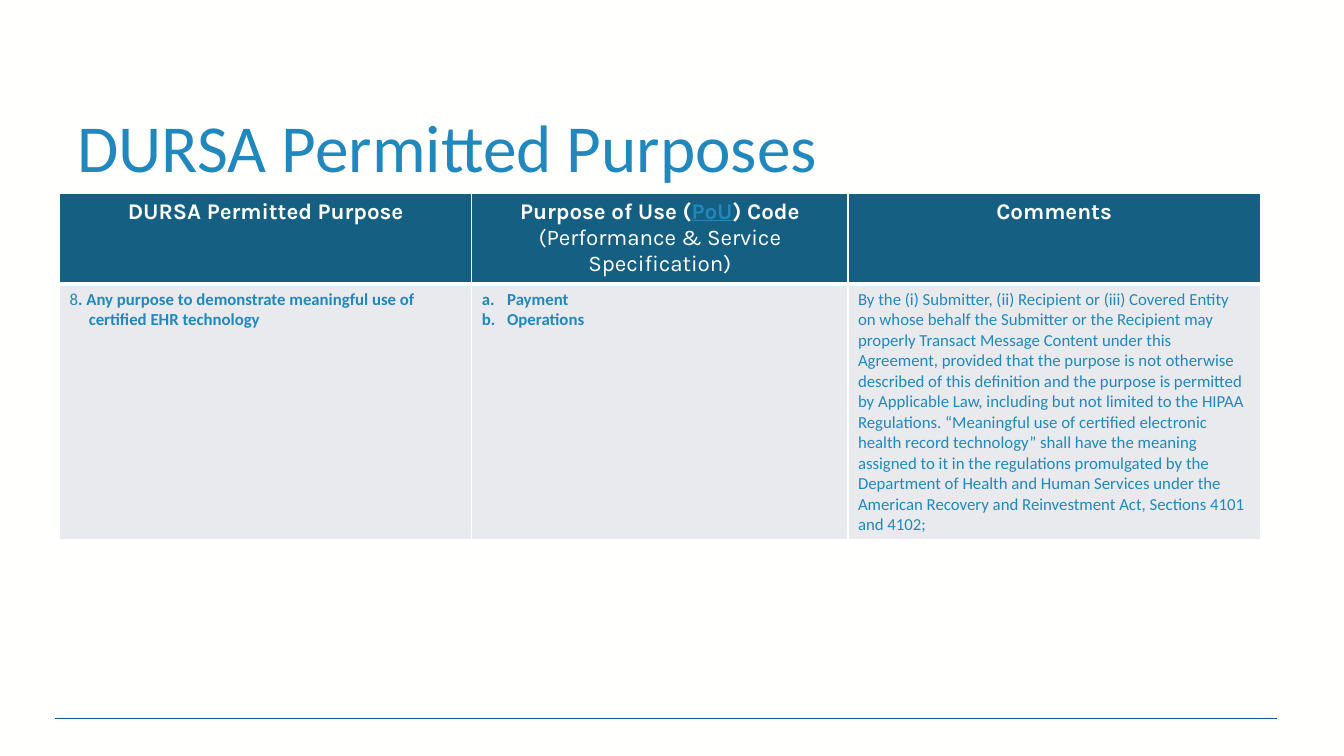
from dataclasses import dataclass

from lxml.etree import SubElement
from pptx import Presentation
from pptx.dml.color import RGBColor
from pptx.enum.shapes import MSO_CONNECTOR
from pptx.enum.text import MSO_ANCHOR, PP_ALIGN
from pptx.oxml.ns import qn
from pptx.util import Inches, Pt


@dataclass(frozen=True)
class Theme:
    background: str = "FFFFFE"
    accent: str = "2088BD"
    rule: str = "13529D"
    header_fill: str = "156082"
    body_fill: str = "E8EAED"
    border: str = "FFFFFF"
    body_font: str = "Calibri"
    header_font: str = "Karla"
    title_size: int = 48
    header_size: int = 16
    body_size: int = 12


THEME = Theme()
HEADER_STYLE = dict(size=THEME.header_size, font=THEME.header_font,
                    color=THEME.background, bold=True)
BODY_STYLE = dict(size=THEME.body_size, font=THEME.body_font, color=THEME.accent)

COLUMN_WIDTHS = (4.09, 3.73, 4.09)
ROW_HEIGHTS = (0.87, 2.53)
# Each cell is a list of paragraphs, each paragraph a list of (text, format) spans.
HEADERS = [
    [[("DURSA Permitted Purpose", {})]],
    [[("Purpose of Use (", {}),
      ("PoU", dict(color=THEME.accent, underline=True)),
      (") Code ", {}),
      ("(Performance & Service Specification)", dict(bold=False))]],
    [[("Comments", {})]],
]
PURPOSE = [
    [[("8", {}),
      (". Any purpose to demonstrate meaningful use of certified EHR technology",
       dict(bold=True))]],
    [[("Payment", dict(bold=True))], [("Operations", dict(bold=True))]],
    [[("By the (i) Submitter, (ii) Recipient or (iii) Covered Entity on whose behalf "
       "the Submitter or the Recipient may properly Transact Message Content under this "
       "Agreement, provided that the purpose is not otherwise described of this "
       "definition and the purpose is permitted by Applicable Law, including but not "
       "limited to the HIPAA Regulations. “Meaningful use of certified electronic health "
       "record technology” shall have the meaning assigned to it in the regulations "
       "promulgated by the Department of Health and Human Services under the American "
       "Recovery and Reinvestment Act, Sections 4101 and 4102;", {})]],
]
# Hanging indent and automatic numbering of the body columns.
BODY_LAYOUTS = (dict(hanging=0.19), dict(hanging=0.25, numbering="alphaLcPeriod"), {})


def rgb(color):
    return RGBColor.from_string(color)


def add_span(para, text, size, font, color, bold=False, underline=False):
    span = para.add_run()
    span.text = text
    span.font.size = Pt(size)
    span.font.name = font
    span.font.bold = bold
    span.font.underline = underline
    span.font.color.rgb = rgb(color)


def write_paragraphs(frame, paragraphs, style, align=PP_ALIGN.LEFT, hanging=0,
                     numbering=None):
    for index, spans in enumerate(paragraphs):
        para = frame.add_paragraph() if index else frame.paragraphs[0]
        para.alignment = align
        properties = para._p.get_or_add_pPr()
        if hanging:
            properties.set("marL", str(Inches(hanging)))
            properties.set("indent", str(-Inches(hanging)))
        if numbering:
            SubElement(properties, qn("a:buFont"), typeface="+mj-lt")
            SubElement(properties, qn("a:buAutoNum"), type=numbering)
        for text, changes in spans:
            add_span(para, text, **{**style, **changes})


def set_borders(cell, top, bottom):
    properties = cell._tc.get_or_add_tcPr()
    for side, points in (("L", 1), ("R", 1), ("T", top), ("B", bottom)):
        line = SubElement(properties, qn(f"a:ln{side}"), w=str(Pt(points)))
        fill = SubElement(line, qn("a:solidFill"))
        SubElement(fill, qn("a:srgbClr"), val=THEME.border)


def add_title(page, text, left, top, width, height):
    box = page.shapes.add_textbox(Inches(left), Inches(top), Inches(width), Inches(height))
    frame = box.text_frame
    frame.word_wrap = True
    frame.vertical_anchor = MSO_ANCHOR.BOTTOM
    style = dict(size=THEME.title_size, font=THEME.body_font, color=THEME.accent)
    write_paragraphs(frame, [[(text, {})]], style)
    frame.paragraphs[0].line_spacing = 0.9


def add_purpose_table(page, left, top):
    table = page.shapes.add_table(
        len(ROW_HEIGHTS), len(COLUMN_WIDTHS), Inches(left), Inches(top),
        Inches(sum(COLUMN_WIDTHS)), Inches(sum(ROW_HEIGHTS))).table
    for row, height in zip(table.rows, ROW_HEIGHTS):
        row.height = Inches(height)
    for column, width in enumerate(COLUMN_WIDTHS):
        table.columns[column].width = Inches(width)
        header, body = table.cell(0, column), table.cell(1, column)
        set_borders(header, top=1, bottom=3)
        set_borders(body, top=3, bottom=1)
        for cell, color in ((header, THEME.header_fill), (body, THEME.body_fill)):
            cell.fill.solid()
            cell.fill.fore_color.rgb = rgb(color)
        write_paragraphs(header.text_frame, HEADERS[column], HEADER_STYLE,
                         align=PP_ALIGN.CENTER)
        write_paragraphs(body.text_frame, PURPOSE[column], BODY_STYLE,
                         **BODY_LAYOUTS[column])


def add_footer_rule(page, left, top, width):
    rule = page.shapes.add_connector(MSO_CONNECTOR.STRAIGHT, Inches(left), Inches(top),
                                     Inches(left + width), Inches(top))
    rule.line.color.rgb = rgb(THEME.rule)
    rule.line.width = Pt(0.5)
    SubElement(rule._element.spPr, qn("a:effectLst"))


def main():
    deck = Presentation()
    deck.slide_width, deck.slide_height = Inches(13.33), Inches(7.5)
    page = deck.slides.add_slide(deck.slide_layouts[6])
    page.background.fill.solid()
    page.background.fill.fore_color.rgb = rgb(THEME.background)
    add_footer_rule(page, 0.55, 7.13, 12.12)
    add_title(page, "DURSA Permitted Purposes", 0.67, 0.81, 12, 1.09)
    add_purpose_table(page, 0.59, 1.92)
    deck.save("out.pptx")


if __name__ == "__main__":
    main()
